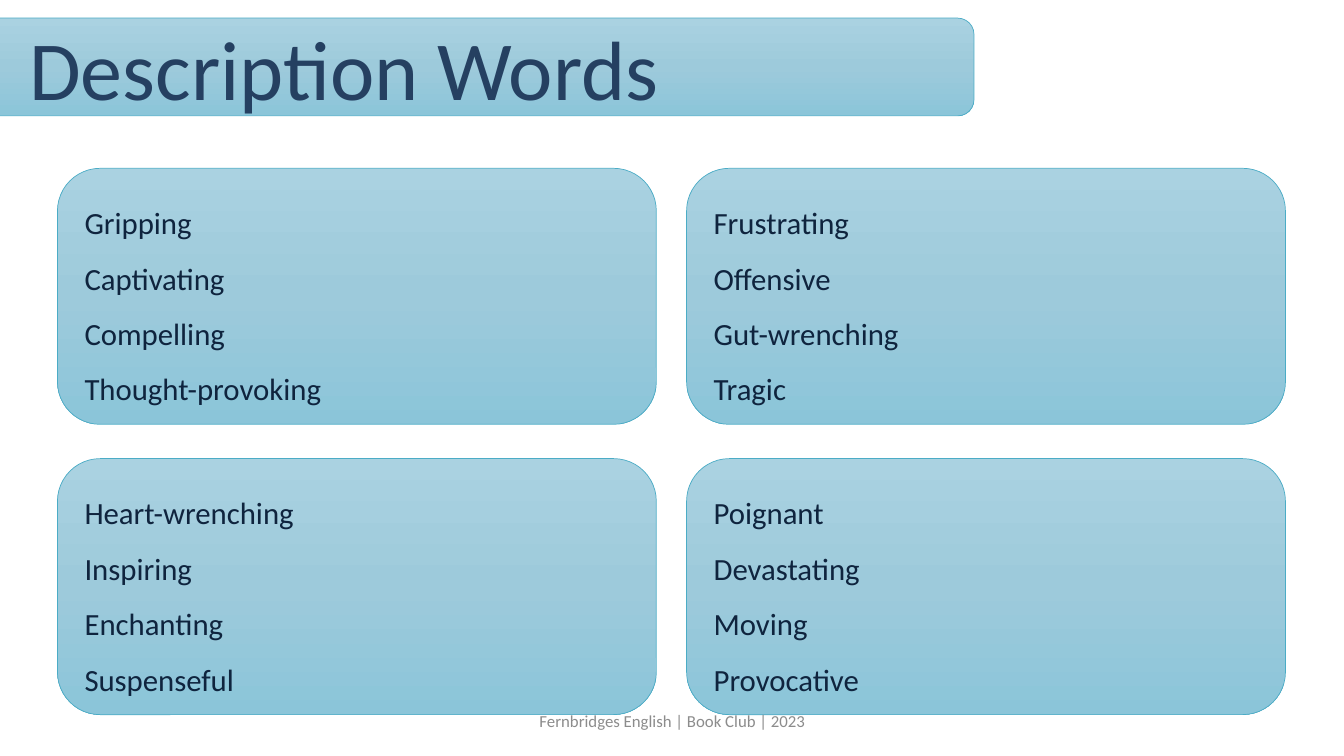
import copy
import pptx
import pptx.util
import pptx.dml.color
import pptx.enum.shapes
import pptx.enum.text

Inches, Pt = pptx.util.Inches, pptx.util.Pt
RGB = pptx.dml.color.RGBColor
ROUND = pptx.enum.shapes.MSO_SHAPE.ROUNDED_RECTANGLE
ALIGN = pptx.enum.text.PP_ALIGN
ANCHOR = pptx.enum.text.MSO_ANCHOR
AUTO = pptx.enum.text.MSO_AUTO_SIZE

# Content
TITLE = "Description Words"
WORDS = [
    [["Gripping", "Captivating", "Compelling", "Thought-provoking"],
     ["Frustrating", "Offensive", "Gut-wrenching", "Tragic"]],
    [["Heart-wrenching", "Inspiring", "Enchanting", "Suspenseful"],
     ["Poignant", "Devastating", "Moving", "Provocative"]],
]
FOOTER = "Fernbridges English | Book Club | 2023"

# Colours
NAVY = RGB(0x25, 0x40, 0x61)
INK = RGB(0x0F, 0x24, 0x3E)
GREY = RGB(0x8C, 0x8C, 0x8C)
EDGE = RGB(0x4B, 0xAC, 0xC6)
SHADES = [RGB(0xAA, 0xD2, 0xE1), RGB(0x9D, 0xCA, 0xDB), RGB(0x8B, 0xC5, 0xD9)]

# Card grid, in inches
LEFT, TOP = 0.57, 1.67
WIDE, HIGH = 5.94, 2.54
STEP_X, STEP_Y = 6.24, 2.88
PAD_X, PAD_Y = 0.17, 0.12


def write(shape, lines, size, color, align=ALIGN.LEFT, anchor=ANCHOR.TOP,
          space=1.0, fit=AUTO.NONE):
    frame = shape.text_frame
    frame.text = "\n".join(lines)
    frame.word_wrap = True
    frame.auto_size = fit
    frame.vertical_anchor = anchor
    for para in frame.paragraphs:
        para.alignment = align
        para.line_spacing = space
        font = para.runs[0].font
        font.name, font.size, font.color.rgb = "Calibri", Pt(size), color


def panel(shapes, x, y, w, h):
    box = shapes.add_shape(ROUND, Inches(x), Inches(y), Inches(w), Inches(h))
    box.shadow.inherit = False
    box.line.color.rgb = EDGE
    box.line.width = Pt(0.5)
    box.fill.gradient()
    box.fill.gradient_angle = 270
    # The preset gradient has two stops; add one in the middle
    first = box.fill._fill._gradFill.gsLst[0]
    first.addnext(copy.deepcopy(first))
    for i, stop in enumerate(box.fill.gradient_stops):
        stop.position = i / 2
        stop.color.rgb = SHADES[i]
    return box


def label(shapes, x, y, w, h):
    return shapes.add_textbox(Inches(x), Inches(y), Inches(w), Inches(h))


def main():
    deck = pptx.Presentation()
    deck.slide_width, deck.slide_height = Inches(13.33), Inches(7.5)
    slide = deck.slides.add_slide(deck.slide_layouts[5])

    # Title on its bar
    bar = panel(slide.shapes, -0.73, 0.18, 10.39, 0.97)
    title = slide.shapes.title
    title.left, title.top = Inches(0.19), Inches(0.23)
    title.width, title.height = Inches(10), Inches(1.18)
    write(title, [TITLE], 60, NAVY, space=0.9)
    bar._element.getparent().insert(2, bar._element)

    # Word cards
    for row, cards in enumerate(WORDS):
        for col, words in enumerate(cards):
            x, y = LEFT + col * STEP_X, TOP + row * STEP_Y
            card = slide.shapes.add_group_shape()
            panel(card.shapes, x, y, WIDE, HIGH)
            text = label(card.shapes, x + PAD_X, y + PAD_Y, 5.63, 2.27)
            write(text, words, 22, INK, space=1.5, fit=AUTO.SHAPE_TO_FIT_TEXT)

    # Footer
    foot = label(slide.shapes, 4.42, 6.95, 4.5, 0.4)
    write(foot, [FOOTER], 12, GREY, align=ALIGN.CENTER, anchor=ANCHOR.MIDDLE)

    deck.save("out.pptx")


if __name__ == "__main__":
    main()
